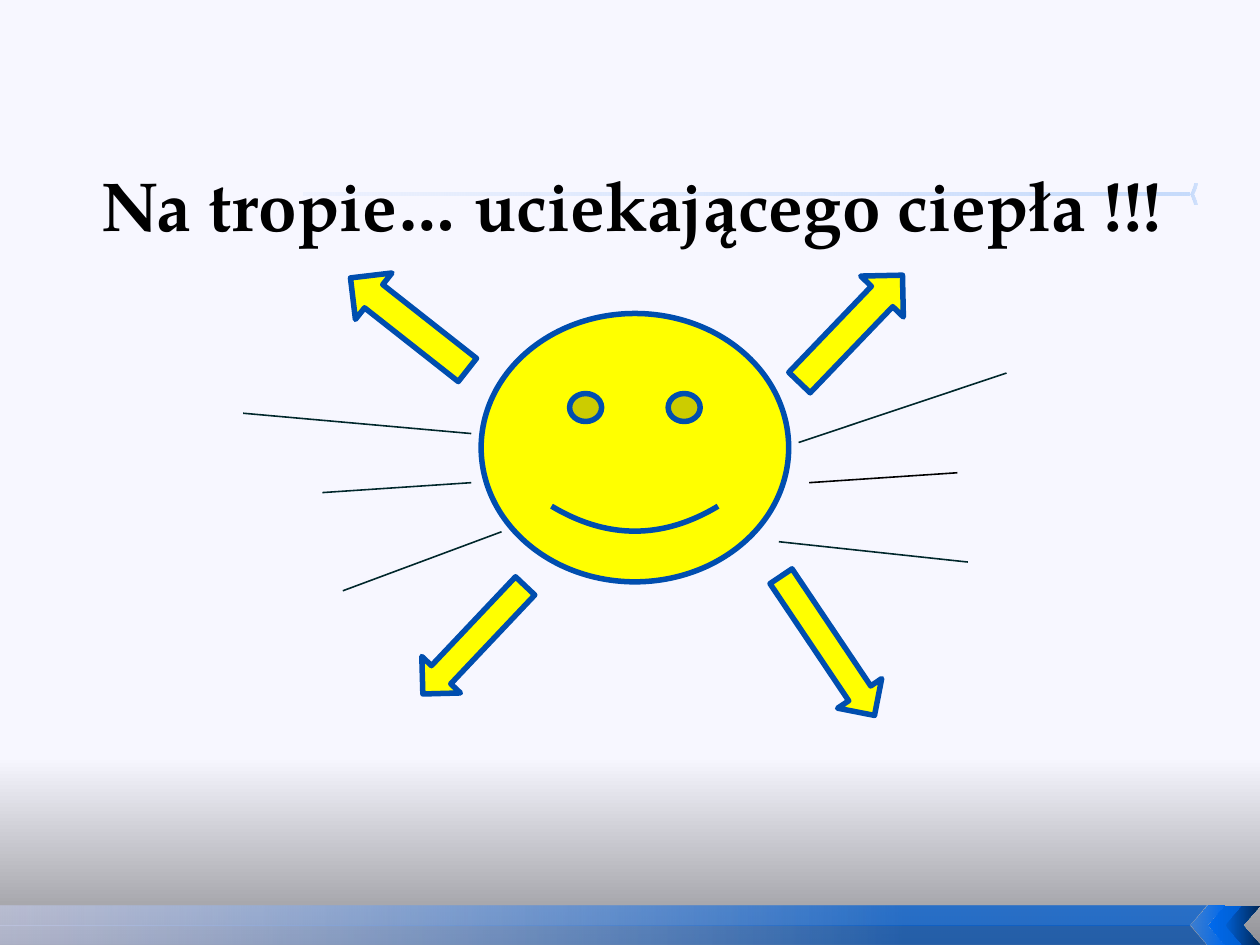
from lxml import etree
from pptx import Presentation
from pptx import util as u
from pptx.dml.color import RGBColor
from pptx.enum import shapes, text
from pptx.oxml import ns

COLORS = {
    "grey": "929297", "mist": "F7F7FF", "pale": "F8F8FF",
    "blue": "004EAF", "mid": "005ED1", "bright": "006AED",
    "navy": "002757", "haze": "CCD4F8", "yellow": "FFFF00",
    "ray": "00272B", "black": "000000",
}
TITLE = "Na tropie… uciekającego ciepła !!!"
BACKGROUND = [(0, "grey", 100), (20, "mist", 100), (100, "pale", 100)]
BAND_MIDDLE = 18.65
BANDS = [(19.05, "blue"), (18.26, "mid")]
CHEVRONS = [
    [(0, "bright", 60), (100, "bright", 100)],
    [(0, "bright", 100), (100, "mid", 100)],
    [(0, "mid", 100), (100, "navy", 100)],
]
SUN = (9.7, 6.32, 6.2, 5.41)
ARROWS = [
    ((9.02, 11.4, 1.07, 3), 223.4),
    ((16.15, 11.33, 1.07, 3.38), 146.1),
    ((7.65, 5.03, 1.19, 3), 308.2),
    ((16.56, 5.13, 1.19, 3), 43.8),
]
RAYS = [
    ((6.91, 11.91, 10.11, 10.72), "ray"),
    ((4.9, 8.33, 9.5, 8.74), "ray"),
    ((16.1, 8.92, 20.29, 7.52), "ray"),
    ((16.31, 9.73, 19.3, 9.53), "black"),
    ((15.7, 10.92, 19.51, 11.33), "ray"),
    ((6.5, 9.93, 9.5, 9.73), "ray"),
]


def cm(values):
    return [u.Cm(value) for value in values]


def color(name):
    return RGBColor.from_string(COLORS[name])


def set_gradient(fill, parent, stops, angle):
    fill.solid()
    gradient = etree.Element(ns.qn("a:gradFill"), rotWithShape="1")
    stop_list = etree.SubElement(gradient, ns.qn("a:gsLst"))
    for position, name, opacity in stops:
        stop = etree.SubElement(stop_list, ns.qn("a:gs"), pos=str(position * 1000))
        tint = etree.SubElement(stop, ns.qn("a:srgbClr"), val=COLORS[name])
        if opacity < 100:
            etree.SubElement(tint, ns.qn("a:alpha"), val=str(opacity * 1000))
    etree.SubElement(gradient, ns.qn("a:lin"), ang=str(angle * 60000), scaled="0")
    solid = parent.find(ns.qn("a:solidFill"))
    parent.replace(solid, gradient)


def decorate(shape, stops):
    shape.shadow.inherit = False
    shape.line.fill.background()
    set_gradient(shape.fill, shape.element.spPr, stops, 180)


def add_chevron(slide, box, stops):
    shape = slide.shapes.add_shape(shapes.MSO_SHAPE.CHEVRON, *cm(box))
    decorate(shape, stops)
    shape.element.spPr.xfrm.set("flipH", "1")


def add_band(slide, edge, name):
    corners = [(24.33, edge), (0, edge), (0, BAND_MIDDLE), (23.98, BAND_MIDDLE)]
    points = [cm(corner) for corner in corners]
    builder = slide.shapes.build_freeform(*points[0])
    builder.add_line_segments(points[1:], close=True)
    decorate(builder.convert_to_shape(), [(25, name, 75), (100, "haze", 50)])


def add_yellow(slide, kind, box, rotation=0):
    shape = slide.shapes.add_shape(kind, *cm(box))
    shape.shadow.inherit = False
    shape.rotation = rotation
    shape.fill.solid()
    shape.fill.fore_color.rgb = color("yellow")
    shape.line.color.rgb = color("blue")
    shape.line.width = u.Pt(3.15)


def add_ray(slide, ends, name):
    ray = slide.shapes.add_connector(shapes.MSO_CONNECTOR.STRAIGHT, *cm(ends))
    ray.line.color.rgb = color(name)
    ray.line.width = u.Pt(0.9)
    etree.SubElement(ray.element.spPr, ns.qn("a:effectLst"))


def add_title(slide):
    frame = slide.shapes.add_textbox(*cm((1.3, 3.05, 22.86, 2.1))).text_frame
    frame.word_wrap = True
    frame.vertical_anchor = text.MSO_ANCHOR.MIDDLE
    paragraph = frame.paragraphs[0]
    paragraph.alignment = text.PP_ALIGN.CENTER
    run = paragraph.add_run()
    run.text = TITLE
    run.font.name = "TeX Gyre Pagella"
    run.font.size = u.Pt(39.6)
    run.font.bold = True
    run.font.color.rgb = color("black")


def main():
    presentation = Presentation()
    presentation.slide_width, presentation.slide_height = cm((25.4, 19.05))
    slide = presentation.slides.add_slide(presentation.slide_layouts[6])
    fill = slide.background.fill
    fill.solid()
    properties = slide.element.find(".//" + ns.qn("p:bgPr"))
    set_gradient(fill, properties, BACKGROUND, 270)

    for edge, name in BANDS:
        add_band(slide, edge, name)
    for index, stops in enumerate(CHEVRONS):
        add_chevron(slide, (24 + index * 0.355, 18.26, 0.69, 0.79), stops)
    add_chevron(slide, (24, 3.71, 0.15, 0.41),
                [(0, "bright", 20), (100, "bright", 15)])
    rule = slide.shapes.add_shape(shapes.MSO_SHAPE.RECTANGLE,
                                  *cm((6.12, 3.89, 17.86, 0.05)))
    decorate(rule, [(0, "bright", 20), (100, "bright", 4)])

    add_title(slide)
    add_yellow(slide, shapes.MSO_SHAPE.SMILEY_FACE, SUN)
    for box, rotation in ARROWS:
        add_yellow(slide, shapes.MSO_SHAPE.UP_ARROW, box, rotation)
    for ends, name in RAYS:
        add_ray(slide, ends, name)
    presentation.save("out.pptx")


if __name__ == "__main__":
    main()
